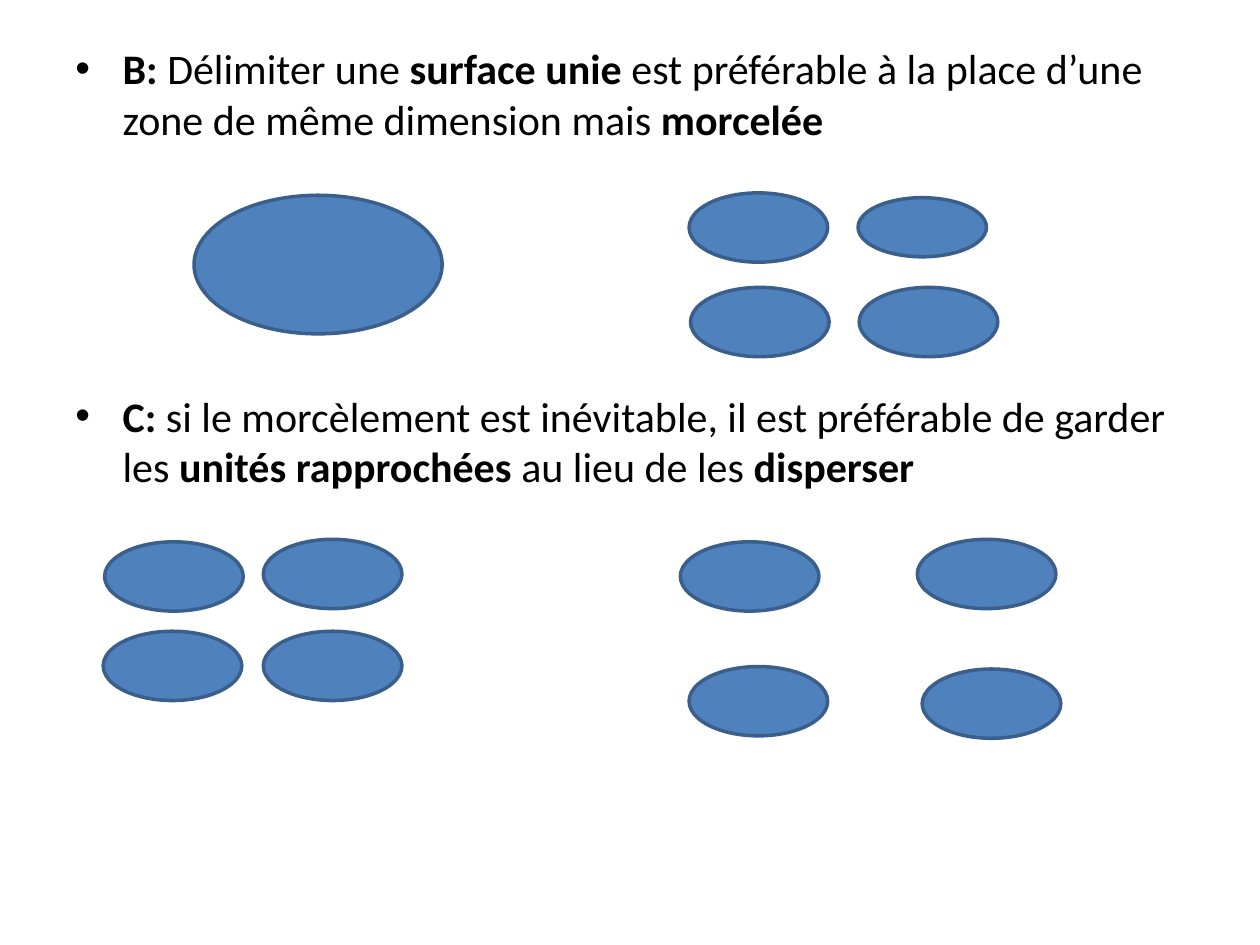
"""Build a slide comparing unified, fragmented, grouped and scattered zones."""
from typing import NamedTuple

from lxml.etree import SubElement
from pptx import Presentation
from pptx.dml.color import RGBColor
from pptx.enum.shapes import MSO_SHAPE as Shape
from pptx.oxml.ns import qn
from pptx.util import Pt

COLOURS = {"text": "000000", "zone": "4F81BD", "outline": "3A5F8C"}
INDENT = 27


class Zone(NamedTuple):
    left: float
    top: float
    width: float = 79.2
    height: float = 39.6


class Principle(NamedTuple):
    space_before: float
    runs: list[tuple[str, bool]]


PRINCIPLES = [
    Principle(0, [
        ("B: ", True),
        ("Délimiter une ", False),
        ("surface unie ", True),
        ("est préférable à la place d’une zone de même dimension mais ", False),
        ("morcelée", True),
    ]),
    Principle(141, [
        ("C: ", True),
        ("si le morcèlement est inévitable, il est préférable de garder les ", False),
        ("unités rapprochées ", True),
        ("au lieu de les ", False),
        ("disperser", True),
    ]),
]

UNIFIED = [Zone(110.9, 111.6, 141.8, 79.2)]
FRAGMENTED = [Zone(393.8, 110.2), Zone(490.3, 113, 73.4, 33.8),
              Zone(394.6, 164.2), Zone(491, 164.2)]
GROUPED = [Zone(59.8, 309.6), Zone(150.5, 308.2),
           Zone(59, 360.7), Zone(150.5, 360.7)]
SCATTERED = [Zone(388.8, 309.6), Zone(524.2, 308.2),
             Zone(393.8, 380.9), Zone(527, 382.3)]


def colour(role: str) -> RGBColor:
    """Return the colour for a role."""
    return RGBColor.from_string(COLOURS[role])


def add_principles(slide, principles: list[Principle]) -> None:
    """Write the principles as one bulleted text."""
    frame = slide.shapes.add_textbox(Pt(36), Pt(20.9), Pt(648), Pt(461.5)).text_frame
    frame.word_wrap = True
    for index, principle in enumerate(principles):
        paragraph = frame.add_paragraph() if index else frame.paragraphs[0]
        paragraph.space_before = Pt(principle.space_before)
        paragraph.font.name = "Calibri"
        paragraph.font.size = Pt(24)
        paragraph.font.color.rgb = colour("text")
        for wording, bold in principle.runs:
            run = paragraph.add_run()
            run.text = wording
            run.font.bold = bold
        add_bullet(paragraph)


def add_bullet(paragraph) -> None:
    """Give a paragraph a round bullet and a hanging indent."""
    properties = paragraph._p.get_or_add_pPr()
    properties.set("marL", str(Pt(INDENT)))
    properties.set("indent", str(Pt(-INDENT)))
    bullet_font = SubElement(properties, qn("a:buFont"), typeface="Arial")
    bullet = SubElement(properties, qn("a:buChar"), char="•")
    defaults = properties.find(qn("a:defRPr"))
    if defaults is not None:
        defaults.addprevious(bullet_font)
        defaults.addprevious(bullet)


def add_zone(slide, zone: Zone) -> None:
    """Draw a zone as an outlined ellipse."""
    ellipse = slide.shapes.add_shape(Shape.OVAL, *map(Pt, zone))
    ellipse.shadow.inherit = False
    ellipse.fill.solid()
    ellipse.fill.fore_color.rgb = colour("zone")
    ellipse.line.color.rgb = colour("outline")
    ellipse.line.width = Pt(2)


def main() -> None:
    """Build and save the presentation."""
    presentation = Presentation()
    presentation.slide_width, presentation.slide_height = Pt(720), Pt(540)
    slide = presentation.slides.add_slide(presentation.slide_layouts[6])
    add_principles(slide, PRINCIPLES)
    for zone in UNIFIED + FRAGMENTED + GROUPED + SCATTERED:
        add_zone(slide, zone)
    presentation.save("out.pptx")


if __name__ == "__main__":
    main()
